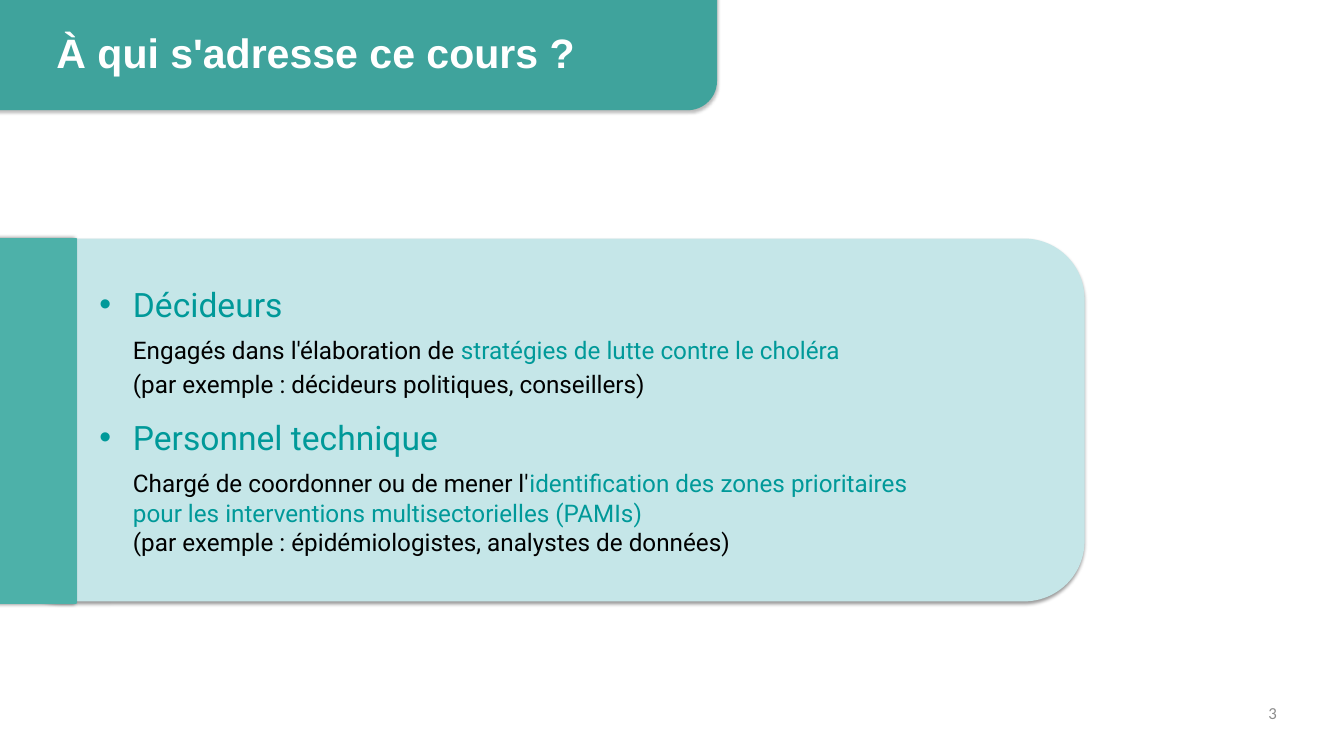
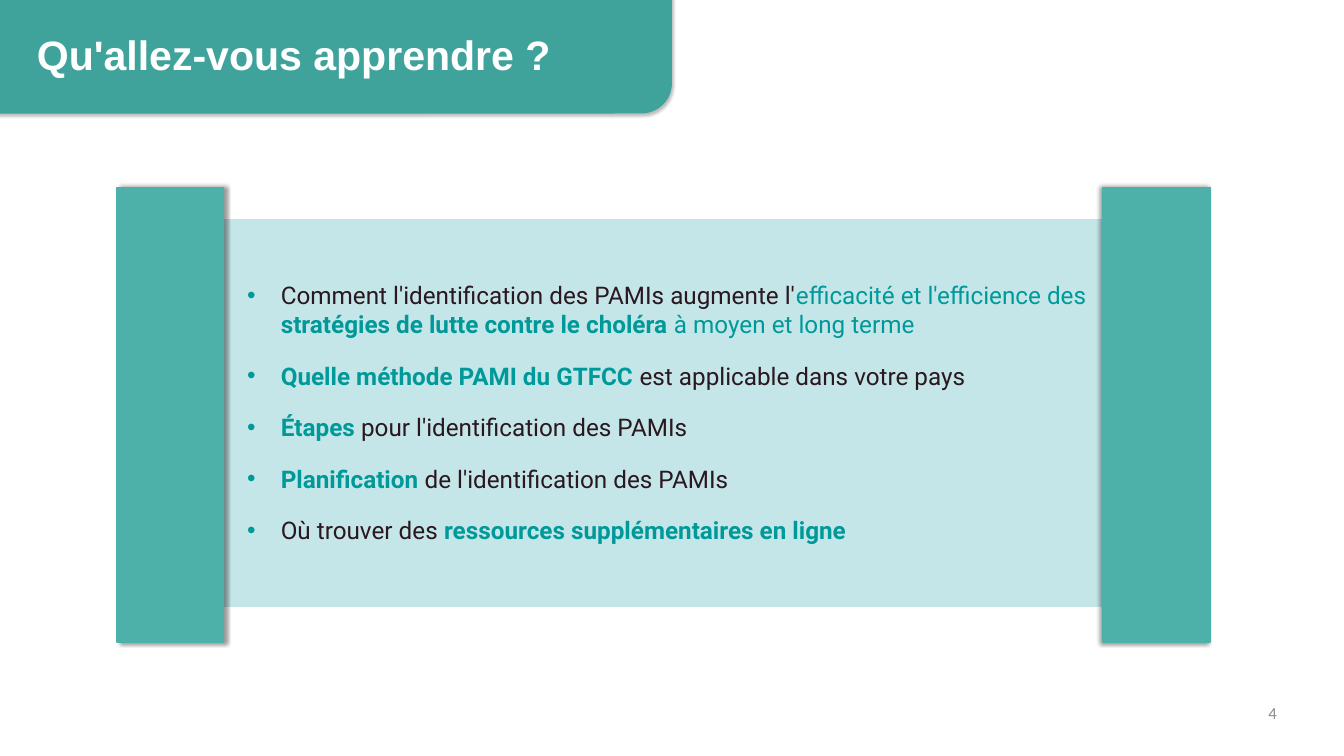
import lxml.etree
import pptx
import pptx.dml.color
import pptx.enum.shapes
import pptx.enum.text
import pptx.oxml.ns
import pptx.util

Inches = pptx.util.Inches
Pt = pptx.util.Pt
RGB = pptx.dml.color.RGBColor.from_string
qn = pptx.oxml.ns.qn
SHAPE = pptx.enum.shapes.MSO_SHAPE
ALIGN = pptx.enum.text.PP_ALIGN

COLORS = {
    "band": "209D94",
    "bar": "4DB1A9",
    "panel": "C5E6E8",
    "accent": "009999",
    "black": "000000",
    "dark": "2A1720",
    "white": "FFFFFF",
    "grey": "8C8C8C",
}

STYLES = {
    "title": {"font": "Arial", "size": 44, "line": 45.2},
    "number": {"font": "Calibri", "size": 18, "align": ALIGN.RIGHT},
    "audience": {"font": "Roboto", "size": 36, "line": 31.6, "after": 12, "margin": 0.5, "bullet": True},
    "spaced detail": {"font": "Roboto", "size": 26, "after": 6, "margin": 0.5},
    "detail": {"font": "Roboto", "size": 26, "margin": 0.5},
    "topic": {"font": "Roboto", "size": 26, "after": 24, "margin": 0.5, "bullet": True},
}


def add_box(s, kind, at, color, outlined=False, shadow=None):
    sp = s.shapes.add_shape(kind, *[Inches(v) for v in at])
    sp.fill.solid()
    sp.fill.fore_color.rgb = RGB(COLORS[color])
    if outlined:
        sp.line.color.rgb = RGB(COLORS[color])
        sp.line.width = Pt(2)
    else:
        sp.line.fill.background()
    sp.shadow.inherit = False
    if shadow:
        opacity, blur, dist, angle = shadow
        effects = sp._element.spPr.find(qn("a:effectLst"))
        outer = lxml.etree.SubElement(
            effects, qn("a:outerShdw"), blurRad=str(Pt(blur)), dist=str(Pt(dist)),
            dir=str(angle * 60000), algn="ctr", rotWithShape="0")
        clr = lxml.etree.SubElement(outer, qn("a:srgbClr"), val=COLORS["black"])
        lxml.etree.SubElement(clr, qn("a:alpha"), val=str(opacity * 1000))
    return sp


def add_text(s, at, paragraphs, inset=True):
    tf = s.shapes.add_textbox(*[Inches(v) for v in at]).text_frame
    tf.word_wrap = True
    if not inset:
        tf.margin_left = tf.margin_right = tf.margin_top = tf.margin_bottom = 0
    for i, (name, runs) in enumerate(paragraphs):
        style = STYLES[name]
        p = tf.add_paragraph() if i else tf.paragraphs[0]
        p.alignment = style.get("align", ALIGN.LEFT)
        p.space_after = Pt(style.get("after", 0))
        if "line" in style:
            p.line_spacing = Pt(style["line"])
        pPr = p._p.get_or_add_pPr()
        margin = Inches(style.get("margin", 0))
        pPr.set("marL", str(margin))
        if style.get("bullet"):
            pPr.set("indent", str(-margin))
            clr = lxml.etree.SubElement(pPr, qn("a:buClr"))
            lxml.etree.SubElement(clr, qn("a:srgbClr"), val=COLORS["accent"])
            lxml.etree.SubElement(pPr, qn("a:buFont"), typeface="Arial")
            lxml.etree.SubElement(pPr, qn("a:buChar"), char="•")
        for text, color, bold in runs:
            r = p.add_run()
            r.text = text
            r.font.name = style["font"]
            r.font.size = Pt(style["size"])
            r.font.bold = bold
            r.font.color.rgb = RGB(COLORS[color])


prs = pptx.Presentation()
prs.slide_width = Inches(20)
prs.slide_height = Inches(11.25)

headers = [
    (3, "À qui s'adresse ce cours ?", (-0.82, -1.47, 11.49, 3.11), (0.84, 0.51, 9.82, 0.66)),
    (4, "Qu'allez-vous apprendre ?", (-0.98, -1.57, 10.98, 3.26), (0.55, 0.55, 10.37, 0.66)),
]
for number, title, band_at, title_at in headers:
    s = prs.slides.add_slide(prs.slide_layouts[6])
    sp = add_box(s, SHAPE.ROUNDED_RECTANGLE, band_at, "band", shadow=(32, 3.5, 2.2, 90))
    sp.adjustments[0] = 0.14
    clr = sp._element.spPr.find(qn("a:solidFill")).find(qn("a:srgbClr"))
    lxml.etree.SubElement(clr, qn("a:alpha"), val="80000")
    add_text(s, title_at, [("title", [(title, "white", True)])], inset=False)
    add_text(s, (14.4, 10.46, 4.6, 0.3), [("number", [(str(number), "grey", False)])], inset=False)

s = prs.slides[0]
add_box(s, SHAPE.ROUNDED_RECTANGLE, (0, 3.55, 16.14, 5.4), "panel", shadow=(40, 4, 3, 90))
add_box(s, SHAPE.RECTANGLE, (0, 3.55, 1.13, 5.42), "bar", outlined=True, shadow=(40, 4, 3, 180))
add_text(s, (1.38, 4.33, 13.62, 1.68), [
    ("audience", [("Décideurs", "accent", False)]),
    ("spaced detail", [
        ("Engagés dans l'élaboration de ", "black", False),
        ("stratégies de lutte contre le choléra", "accent", False)]),
    ("detail", [("(par exemple : décideurs politiques, conseillers)", "black", False)]),
])
add_text(s, (1.38, 6.32, 12.57, 2.03), [
    ("audience", [("Personnel technique", "accent", False)]),
    ("detail", [
        ("Chargé de coordonner ou de mener l'", "black", False),
        ("identification des zones prioritaires pour les interventions multisectorielles (PAMIs)",
         "accent", False)]),
    ("detail", [("(par exemple : épidémiologistes, analystes de données)", "black", False)]),
])

s = prs.slides[1]
add_box(s, SHAPE.RECTANGLE, (3.12, 3.27, 13.84, 5.75), "panel", outlined=True)
for left, angle in [(1.74, 0), (16.42, 180)]:
    add_box(s, SHAPE.RECTANGLE, (left, 2.79, 1.58, 6.77), "bar", outlined=True, shadow=(40, 4, 3, angle))
topics = [
    [("Comment l'identification des PAMIs augmente l'", "dark", False),
     ("efficacité et l'efficience des ", "accent", False),
     ("stratégies de lutte contre le choléra ", "accent", True),
     ("à moyen et long terme", "accent", False)],
    [("Quelle méthode PAMI du GTFCC ", "accent", True),
     ("est applicable dans votre pays", "dark", False)],
    [("Étapes ", "accent", True), ("pour l'identification des PAMIs", "dark", False)],
    [("Planification ", "accent", True), ("de l'identification des PAMIs", "dark", False)],
    [("Où trouver des ", "dark", False), ("ressources supplémentaires en ligne", "accent", True)],
]
add_text(s, (3.58, 4.12, 12.85, 4.07), [("topic", runs) for runs in topics])

prs.save("out.pptx")
